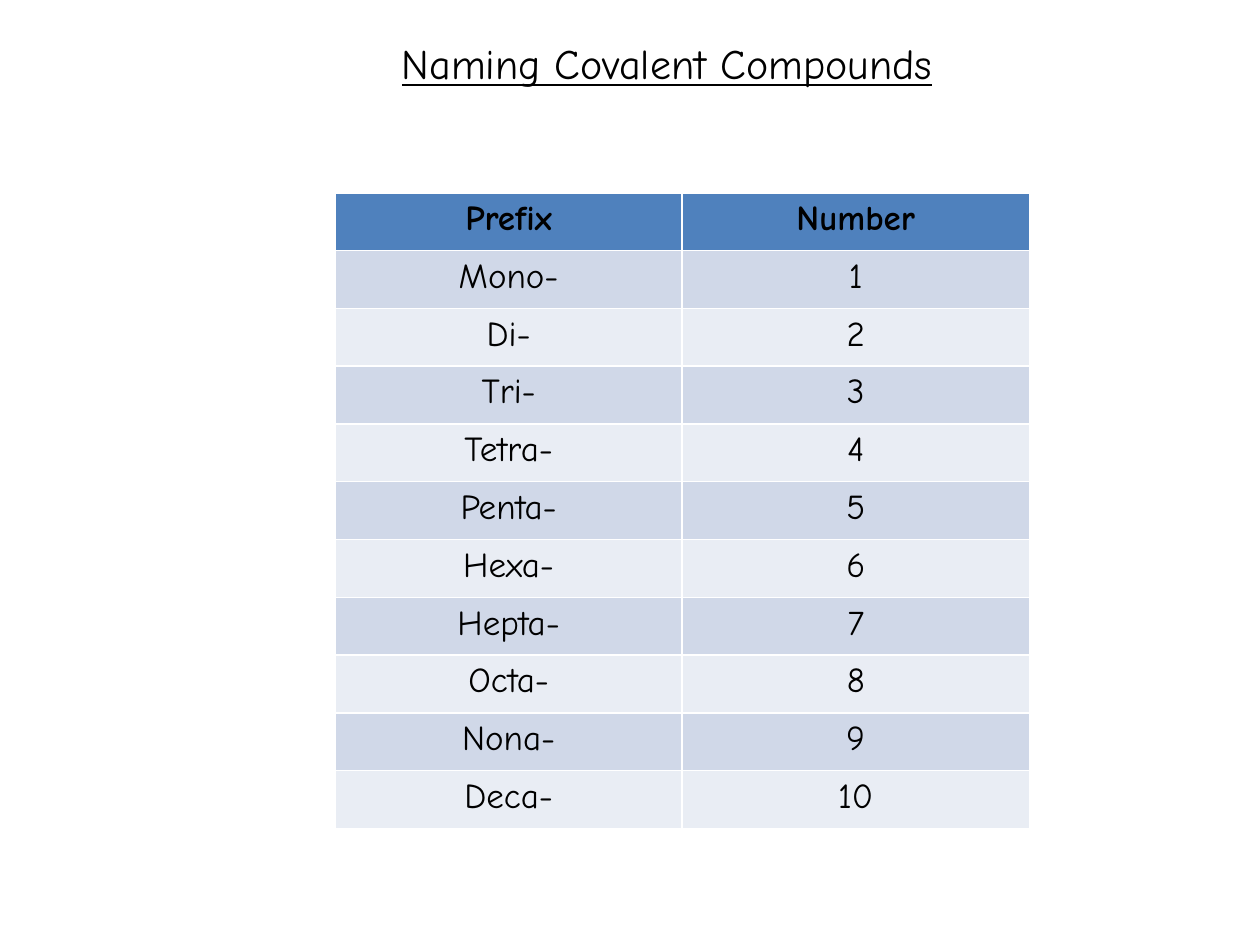
"""Build a slide that lists the number prefixes of covalent compounds."""
from pptx import Presentation
from pptx.dml.color import RGBColor as Rgb
from pptx.enum.text import MSO_AUTO_SIZE as Fit, PP_ALIGN as Align
from pptx.util import Inches, Pt

TITLE = "Naming Covalent Compounds"
HEADS = ("Prefix", "Number")
STEMS = ("Mono-", "Di-", "Tri-", "Tetra-", "Penta-",
         "Hexa-", "Hepta-", "Octa-", "Nona-", "Deca-")
ROWS = [HEADS] + [(stem, str(num)) for num, stem in enumerate(STEMS, 1)]
HUES = {"text": "000000", "head": "4F81BD", "odd": "D0D8E8", "even": "E9EDF4"}
FACE = "Comic Neue"
COL_W, ROW_H = 2.755, 0.459


def style(para, size, bold=False):
    font = para.font
    font.name, font.size, font.bold = FACE, Pt(size), bold
    font.color.rgb = Rgb.from_string(HUES["text"])


def add_title(slide):
    box = slide.shapes.add_textbox(
        Inches(3.09), Inches(0.25), Inches(5.08), Inches(0.5))
    frame = box.text_frame
    frame.word_wrap = True
    frame.auto_size = Fit.SHAPE_TO_FIT_TEXT
    frame.text = TITLE
    para = frame.paragraphs[0]
    style(para, 24)
    para.font.underline = True


def add_grid(slide):
    count, width = len(ROWS), len(HEADS)
    grid = slide.shapes.add_table(
        count, width, Inches(2.66), Inches(1.53),
        Inches(COL_W * width), Inches(ROW_H * count)).table
    for col in grid.columns:
        col.width = Inches(COL_W)
    for i, texts in enumerate(ROWS):
        grid.rows[i].height = Inches(ROW_H)
        hue = "head" if i == 0 else "odd" if i % 2 else "even"
        for j, text in enumerate(texts):
            cell = grid.cell(i, j)
            cell.fill.solid()
            cell.fill.fore_color.rgb = Rgb.from_string(HUES[hue])
            cell.text = text
            para = cell.text_frame.paragraphs[0]
            para.alignment = Align.CENTER
            style(para, 20, bold=i == 0)


def main():
    deck = Presentation()
    deck.slide_width, deck.slide_height = Inches(10), Inches(7.5)
    slide = deck.slides.add_slide(deck.slide_layouts[6])
    add_title(slide)
    add_grid(slide)
    deck.save("out.pptx")


if __name__ == "__main__":
    main()
